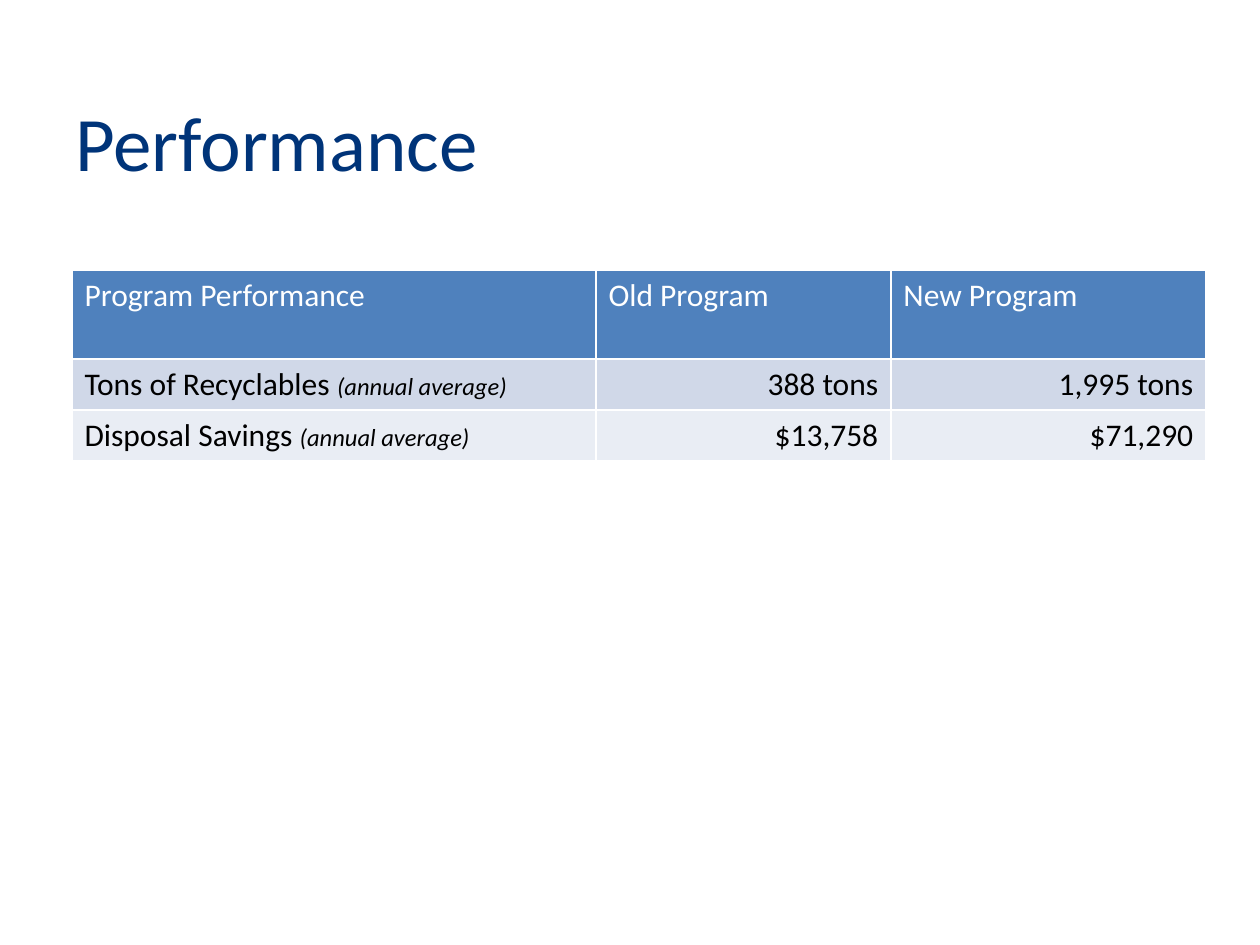
import pptx
import pptx.dml.color
import pptx.enum.text
import pptx.oxml
import pptx.oxml.ns
import pptx.util

PX = 914400 // 126
ALIGN = pptx.enum.text.PP_ALIGN
NOTE = "(annual average)"
ROWS = [
    ["Program Performance", "Old Program", "New Program"],
    ["Tons of Recyclables ", "388 tons", "1,995 tons"],
    ["Disposal Savings ", "$13,758", "$71,290"],
]
FILLS = ["4F81BD", "D0D8E8", "E9EDF4"]
COLS = [524, 295, 315]
HIGHS = [89, 51, 51]


def emu(px):
    return pptx.util.Emu(px * PX)


def paint(color, code):
    color.rgb = pptx.dml.color.RGBColor.from_string(code)


def write(para, text, size=18, color="000000", italic=False, align=ALIGN.LEFT):
    """Add one formatted run to a paragraph."""
    para.alignment = align
    run = para.add_run()
    run.text = text
    font = run.font
    font.name = "Calibri"
    font.size = pptx.util.Pt(size)
    font.bold = False
    font.italic = italic
    paint(font.color, color)


def edge(cell, code="FFFFFF", width=1):
    """Draw all four borders of a cell."""
    props = cell._tc.get_or_add_tcPr()
    for side in "LRTB":
        props.append(pptx.oxml.parse_xml(
            f'<a:ln{side} {pptx.oxml.ns.nsdecls("a")} w="{pptx.util.Pt(width)}">'
            f'<a:solidFill><a:srgbClr val="{code}"/></a:solidFill></a:ln{side}>'))


def title(slide, box):
    frame = slide.shapes.add_textbox(*map(emu, box)).text_frame
    frame.word_wrap = True
    frame.vertical_anchor = pptx.enum.text.MSO_ANCHOR.MIDDLE
    write(frame.paragraphs[0], "Performance", size=44, color="003479")


def results(slide, box):
    table = slide.shapes.add_table(len(ROWS), len(COLS), *map(emu, box)).table
    for col, wide in zip(table.columns, COLS):
        col.width = emu(wide)
    for r, (row, high) in enumerate(zip(ROWS, HIGHS)):
        table.rows[r].height = emu(high)
        for c, text in enumerate(row):
            cell = table.cell(r, c)
            edge(cell)
            cell.fill.solid()
            paint(cell.fill.fore_color, FILLS[r])
            para = cell.text_frame.paragraphs[0]
            write(para, text, color="000000" if r else "FFFFFF",
                  align=ALIGN.RIGHT if r and c else ALIGN.LEFT)
            if r and not c:
                write(para, NOTE, size=14, italic=True)


def main():
    deck = pptx.Presentation()
    deck.slide_width, deck.slide_height = emu(1260), emu(945)
    slide = deck.slides.add_slide(deck.slide_layouts[6])
    title(slide, (63, 76, 1134, 129))
    results(slide, (72, 270, sum(COLS), sum(HIGHS)))
    deck.save("out.pptx")


if __name__ == "__main__":
    main()
